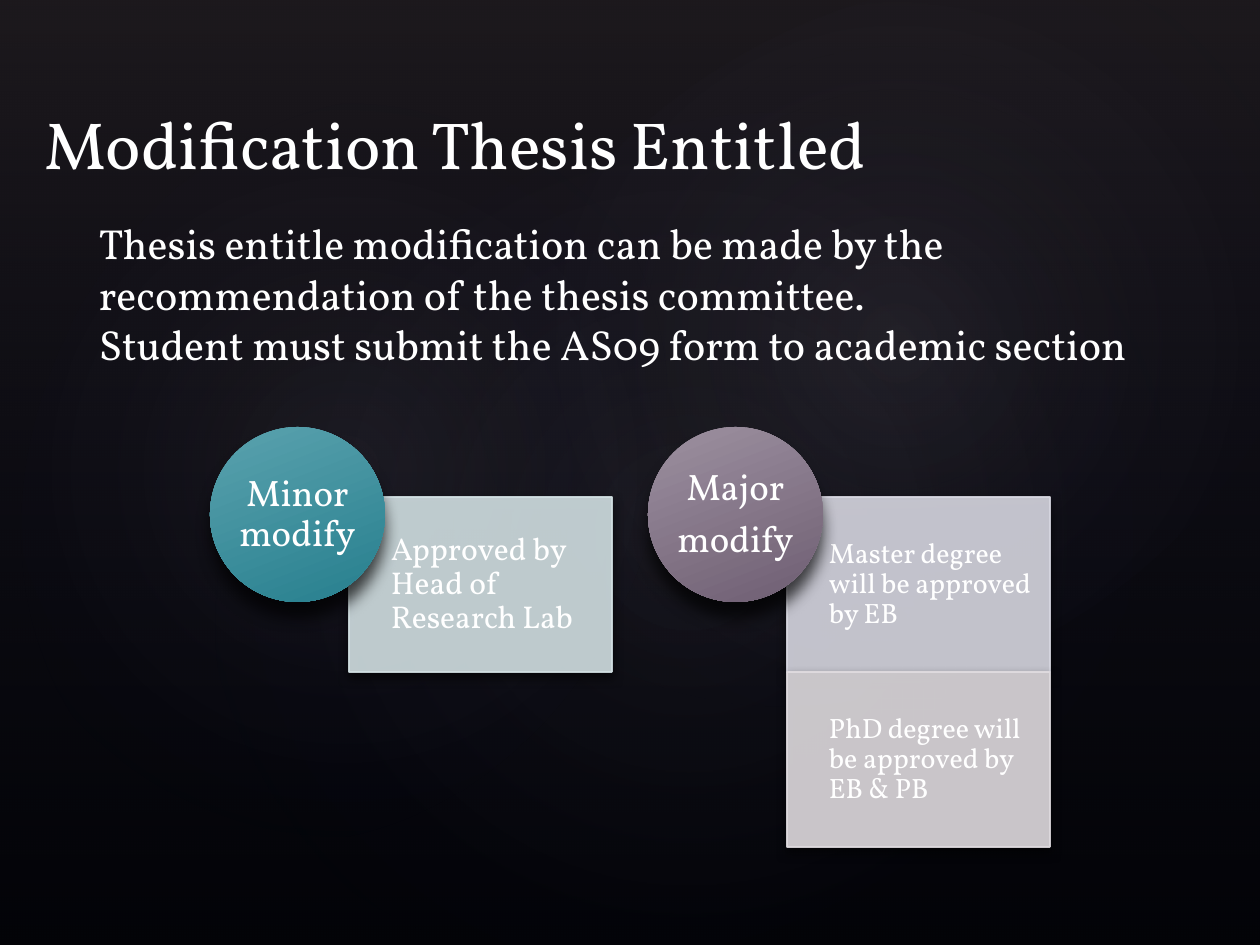
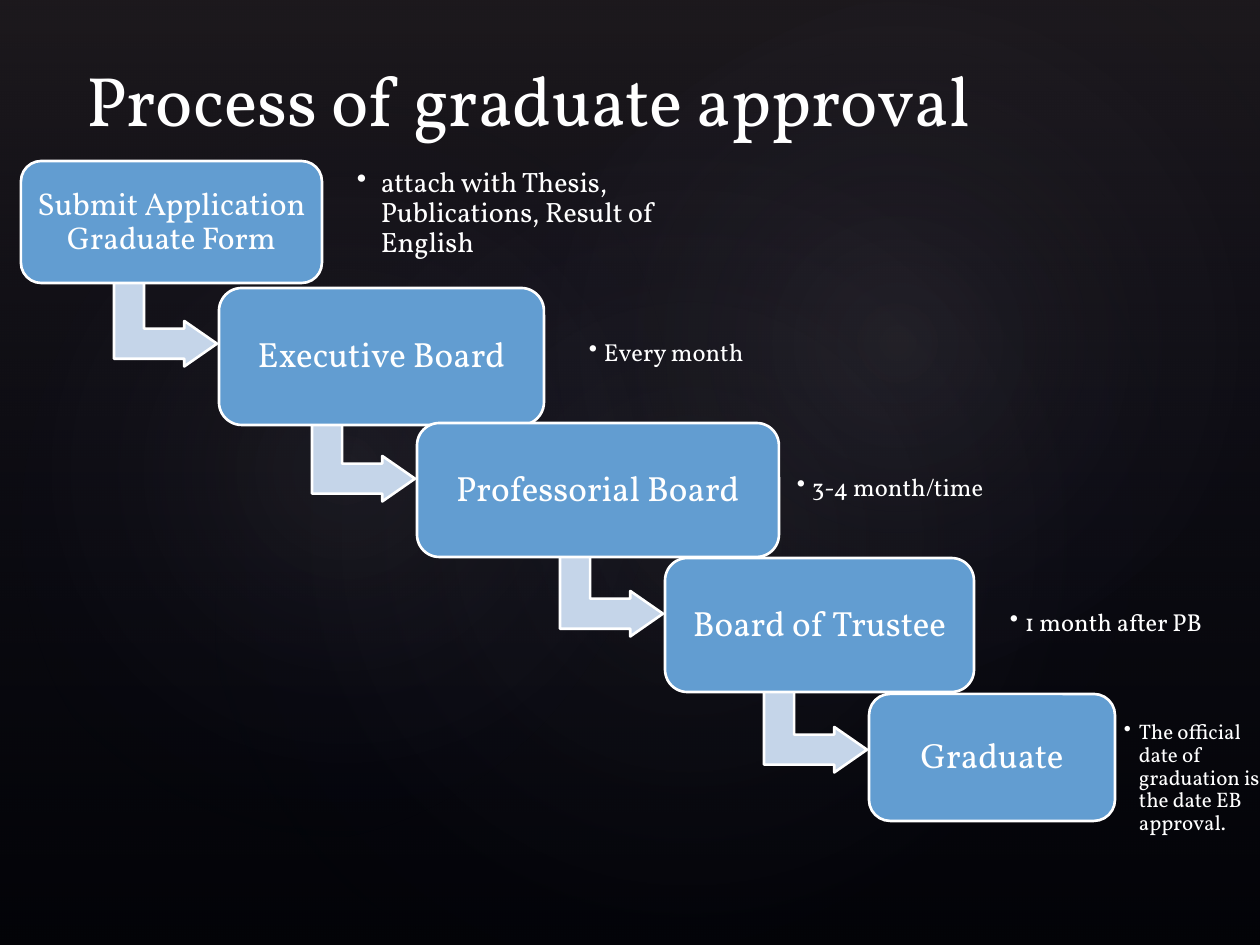
import dataclasses
import itertools

import pptx
import pptx.dml.color
import pptx.enum.shapes
import pptx.enum.text
import pptx.oxml
import pptx.oxml.ns
import pptx.util

SCALE = 914400 / 126
PAGE_SIZE = (1260, 945)

ANCHOR = pptx.enum.text.MSO_ANCHOR
ALIGN = pptx.enum.text.PP_ALIGN
SHAPE = pptx.enum.shapes.MSO_SHAPE


@dataclasses.dataclass(frozen=True)
class Theme:
    font: str = "Vollkorn"
    page: str = "000000"
    text: str = "FFFFFF"
    haze_top: str = "504652"
    haze_end: str = "242852"
    glow: str = "C4BCC6"
    step: str = "629DD1"
    arrow: str = "C5D5E9"
    teal: tuple = ("5AA2AE", "277F8E")
    mauve: tuple = ("9D90A0", "6E5E72")
    minor_card: str = "D2E0E3"
    master_card: str = "D7D7E1"
    phd_card: str = "DFDBDF"
    title_size: int = 40
    long_title_size: int = 38
    body_size: int = 24
    circle_size: int = 21
    step_size: int = 20
    card_size: int = 18
    small_card_size: int = 16
    note_size: int = 14
    small_note_size: int = 12


THEME = Theme()


def px(length):
    return pptx.util.Emu(round(length * SCALE))


def rgb(code):
    return pptx.dml.color.RGBColor.from_string(code)


def set_all(target, values):
    for name, value in values.items():
        setattr(target, name, value)


def xml(text):
    head, tail = text.split(" ", 1)
    return pptx.oxml.parse_xml(f"{head} {pptx.oxml.ns.nsdecls('a')} {tail}")


def color_xml(code, alpha):
    return f'<a:srgbClr val="{code}"><a:alpha val="{alpha * 1000}"/></a:srgbClr>'


def add_shape(page, kind, box):
    """Add a preset shape with neither fill, line nor shadow."""
    shape = page.shapes.add_shape(kind, *map(px, box))
    shape.shadow.inherit = False
    shape.fill.background()
    shape.line.fill.background()
    return shape


def paint(fill, code, alpha=100):
    fill.solid()
    fill.fore_color.rgb = rgb(code)
    if alpha < 100:
        color = fill._xPr.find(".//" + pptx.oxml.ns.qn("a:srgbClr"))
        color.append(xml(f'<a:alpha val="{alpha * 1000}"/>'))


def outline(shape, code, width, alpha=100):
    shape.line.width = pptx.util.Pt(width)
    paint(shape.line.fill, code, alpha)


def paint_gradient(shape, stops, angle=None):
    """Fill with (position, colour, alpha) stops; no angle means from the centre."""
    shape.fill.gradient()
    gradient = shape._element.spPr.find(pptx.oxml.ns.qn("a:gradFill"))
    for child in list(gradient):
        gradient.remove(child)
    marks = "".join(
        f'<a:gs pos="{position * 1000}">{color_xml(code, alpha)}</a:gs>'
        for position, code, alpha in stops)
    gradient.append(xml(f"<a:gsLst >{marks}</a:gsLst>"))
    if angle is None:
        gradient.append(xml(
            '<a:path path="circle"><a:fillToRect l="50000" t="50000" '
            'r="50000" b="50000"/></a:path>'))
    else:
        gradient.append(xml(f'<a:lin ang="{angle * 60000}" scaled="0"/>'))


def cast_shadow(shape, alpha, blur, distance):
    effects = shape._element.spPr.find(pptx.oxml.ns.qn("a:effectLst"))
    effects.append(xml(
        f'<a:outerShdw blurRad="{blur * 12700}" dist="{distance * 12700}" '
        f'dir="5400000" rotWithShape="0">{color_xml("000000", alpha)}</a:outerShdw>'))


def write(shape, lines, size, insets, anchor=ANCHOR.MIDDLE, **para_format):
    """Write one paragraph per line; insets are left, top, right, bottom in px."""
    frame = shape.text_frame
    sides = ("margin_left", "margin_top", "margin_right", "margin_bottom")
    set_all(frame, dict(zip(sides, map(px, insets)),
                        word_wrap=True, vertical_anchor=anchor))
    for index, line in enumerate(lines):
        para = frame.add_paragraph() if index else frame.paragraphs[0]
        para.text = line
        set_all(para, {"alignment": ALIGN.LEFT, **para_format})
        for span in para.runs:
            set_all(span.font, {"name": THEME.font, "size": pptx.util.Pt(size)})
            span.font.color.rgb = rgb(THEME.text)
    return frame


def add_text(page, box, lines, size, insets=(13, 6, 13, 6), **formats):
    return write(page.shapes.add_textbox(*map(px, box)), lines, size, insets, **formats)


def add_page(deck, title, title_box, title_size):
    """Add a blank page with the dark glowing backdrop and its title."""
    page = deck.slides.add_slide(deck.slide_layouts[6])
    paint(page.background.fill, THEME.page)
    haze = add_shape(page, SHAPE.RECTANGLE, (0, 0, *PAGE_SIZE))
    paint_gradient(haze, [(0, THEME.haze_top, 36), (100, THEME.haze_end, 10)], 90)
    glows = [
        ((189, 144, 998, 786), 328.7, 7),
        ((-38, 161, 764, 617), 294.3, 8),
        ((451, 16, 893, 655), 328.7, 8),
    ]
    for box, rotation, alpha in glows:
        glow = add_shape(page, SHAPE.OVAL, box)
        glow.rotation = rotation
        paint_gradient(glow, [(0, THEME.glow, alpha), (58, THEME.haze_end, 0)])
    add_text(page, title_box, [title], title_size, anchor=ANCHOR.BOTTOM)
    return page


def add_modification(page, left, top, label, colors, cards):
    """Add a circle label with its cards stacked down from behind it."""
    diameter = card_height = 175
    card_width, text_indent = 263, 42
    for row, (text, color, size, inset) in enumerate(cards):
        card = add_shape(page, SHAPE.RECTANGLE,
                         (left + 139, top + 70 + row * card_height, card_width, card_height))
        paint(card.fill, color, 90)
        outline(card, color, 1, 90)
        cast_shadow(card, 60, 6, 3)
        write(card, [text], size, (text_indent, inset, inset, inset), line_spacing=0.9)
    circle = add_shape(page, SHAPE.OVAL, (left, top, diameter, diameter))
    paint_gradient(circle, [(0, colors[0], 100), (100, colors[1], 100)], 69)
    cast_shadow(circle, 70, 9, 9)
    frame = write(circle, label, THEME.circle_size, (0, 0, 0, 0),
                  alignment=ALIGN.CENTER, line_spacing=0.9)
    for para in frame.paragraphs[:-1]:
        para.space_after = pptx.util.Pt(7)


def add_step_arrow(page, next_box):
    """Add a bent arrow whose tip meets the left side of the next step."""
    width, height = 91, 103
    center_x = next_box[0] - 2 - height / 2
    center_y = next_box[1] + 33
    arrow = add_shape(page, SHAPE.BENT_UP_ARROW,
                      (center_x - width / 2, center_y - height / 2, width, height))
    arrow.rotation = 90
    for index, value in enumerate((0.33, 0.25, 0.36)):
        arrow.adjustments[index] = value
    paint(arrow.fill, THEME.arrow)
    outline(arrow, THEME.text, 1.5)


def add_step(page, box, text, size):
    step = add_shape(page, SHAPE.ROUNDED_RECTANGLE, box)
    paint(step.fill, THEME.step)
    outline(step, THEME.text, 1.5)
    write(step, [text], size, (9, 9, 9, 9), alignment=ALIGN.CENTER, line_spacing=0.9)


def add_note(page, box, text, size, indent, inset):
    frame = add_text(page, box, [text], size, (inset,) * 4, line_spacing=0.9)
    properties = frame.paragraphs[0]._p.get_or_add_pPr()
    properties.set("marL", str(px(indent)))
    properties.set("indent", str(-px(indent)))
    properties.append(xml('<a:buChar char="•"/>'))


def build_modification_page(deck):
    page = add_page(deck, "Modification Thesis Entitled",
                    (32, 63, 1207, 126), THEME.long_title_size)
    add_text(page, (84, 199, 1134, 189),
             ["Thesis entitle modification can be made by the recommendation of "
              "the thesis committee.\vStudent must submit the AS09 form to academic section"],
             THEME.body_size, (15, 6, 13, 6), space_before=pptx.util.Pt(5))
    add_modification(page, 210, 427, ["Minor\vmodify"], THEME.teal, [
        ("Approved by Head of Research Lab", THEME.minor_card, THEME.card_size, 18),
    ])
    add_modification(page, 648, 427, ["Major", "modify"], THEME.mauve, [
        ("Master degree will be approved by EB",
         THEME.master_card, THEME.small_card_size, 15),
        ("PhD degree will be approved by EB & PB",
         THEME.phd_card, THEME.small_card_size, 15),
    ])


def build_approval_page(deck):
    page = add_page(deck, "Process of graduate approval",
                    (73, 21, 1040, 126), THEME.title_size)
    step_size, note_size = THEME.step_size, THEME.note_size
    steps = [
        ((21, 161, 301, 122), "Submit Application Graduate Form", THEME.card_size),
        ((219, 288, 325, 137), "Executive Board", step_size),
        ((417, 423, 362, 134), "Professorial Board", step_size),
        ((665, 558, 309, 134), "Board of Trustee", step_size),
        ((869, 694, 246, 127), "Graduate", step_size),
    ]
    notes = [
        ((348, 170, 394, 87), "attach with Thesis, Publications, Result of English",
         THEME.small_card_size, 24, 9),
        ((581, 310, 194, 87), "Every month", note_size, 15, 8),
        ((789, 445, 229, 87), "3-4 month/time", note_size, 15, 8),
        ((1002, 580, 239, 87), "1 month after PB", note_size, 15, 8),
        ((1118, 696, 163, 165), "The official date of graduation is the date EB approval.",
         THEME.small_note_size, 15, 6),
    ]
    for step, next_step in itertools.pairwise(steps):
        add_step_arrow(page, next_step[0])
    for step, note in zip(steps, notes):
        add_step(page, *step)
        add_note(page, *note)


def main():
    deck = pptx.Presentation()
    deck.slide_width, deck.slide_height = map(px, PAGE_SIZE)
    build_modification_page(deck)
    build_approval_page(deck)
    deck.save("out.pptx")


if __name__ == "__main__":
    main()
